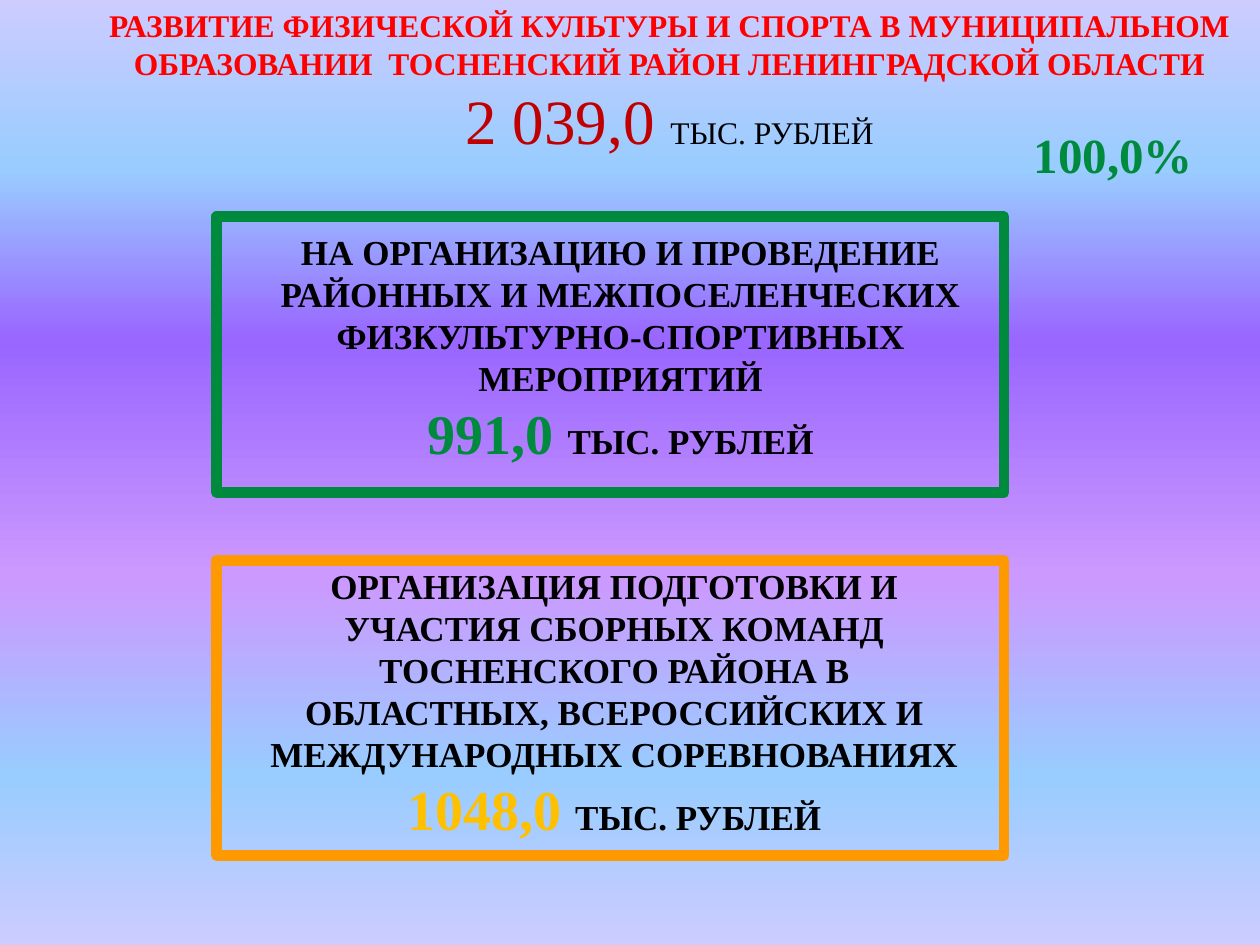
import pptx
import pptx.dml.color
import pptx.enum.dml
import pptx.enum.shapes
import pptx.enum.text
import pptx.oxml
import pptx.oxml.ns
import pptx.util
from pptx.util import Inches

FONT = "Times New Roman"
GREEN = "008A3E"
UNIT = "ТЫС. РУБЛЕЙ"
NAMESPACE = pptx.oxml.ns.nsdecls("a")
BACKDROP = [(0, "CCCCFF"), (18, "99CCFF"), (36, "9966FF"),
            (61, "CC99FF"), (82, "99CCFF"), (100, "CCCCFF")]

TITLE = {
    "place": (0.75, 0, 9.13, 1.31),
    "lines": [
        [("РАЗВИТИЕ ФИЗИЧЕСКОЙ КУЛЬТУРЫ И СПОРТА В МУНИЦИПАЛЬНОМ "
          "ОБРАЗОВАНИИ  ТОСНЕНСКИЙ РАЙОН ЛЕНИНГРАДСКОЙ ОБЛАСТИ",
          {"size": 18, "color": "FF0000", "outline": "000000"})],
        [("2 039,0 ", {"size": 36, "color": "C00000", "bold": False, "outline": "C00000"}),
         (UNIT, {"size": 18, "bold": False, "outline": "000000"})],
    ],
}
SHARE = {
    "place": (8.05, 0.94, 1.57, 0.57),
    "lines": [[("100,0%", {"size": 28, "color": GREEN, "outline": "4F6228", "shadow": True})]],
}
EXPENSES = [
    {"frame": (1.72, 1.72, 6.25, 2.19), "line": GREEN,
     "place": (2.09, 1.78, 5.67, 1.99), "amount": "991,0 ", "color": GREEN,
     "purpose": "НА ОРГАНИЗАЦИЮ И ПРОВЕДЕНИЕ РАЙОННЫХ И МЕЖПОСЕЛЕНЧЕСКИХ "
                "ФИЗКУЛЬТУРНО-СПОРТИВНЫХ МЕРОПРИЯТИЙ"},
    {"frame": (1.72, 4.45, 6.25, 2.34), "line": "FF9900",
     "place": (2.01, 4.43, 5.73, 2.32), "amount": "1048,0 ", "color": "FFC000",
     "purpose": "ОРГАНИЗАЦИЯ ПОДГОТОВКИ И УЧАСТИЯ СБОРНЫХ КОМАНД ТОСНЕНСКОГО РАЙОНА "
                "В ОБЛАСТНЫХ, ВСЕРОССИЙСКИХ И МЕЖДУНАРОДНЫХ СОРЕВНОВАНИЯХ"},
]


def rgb(value):
    return pptx.dml.color.RGBColor.from_string(value)


def element(markup):
    return pptx.oxml.parse_xml(markup.replace(">", f" {NAMESPACE}>", 1))


def add_span(para, text, size=20, color="000000", bold=True, outline=None, shadow=False):
    span = para.add_run()
    span.text = text
    span.font.size = pptx.util.Pt(size)
    span.font.name = FONT
    span.font.bold = bold
    span.font.color.rgb = rgb(color)
    properties = span.font._element
    if shadow:
        fill = properties.find(pptx.oxml.ns.qn("a:solidFill"))
        fill.addnext(element(
            '<a:effectLst><a:outerShdw blurRad="50800" dist="38100" dir="5400000" '
            'algn="t" rotWithShape="0"><a:srgbClr val="000000"><a:alpha val="40000"/>'
            '</a:srgbClr></a:outerShdw></a:effectLst>'))
    if outline:
        properties.insert(0, element(
            f'<a:ln w="9000"><a:solidFill><a:srgbClr val="{outline}"/></a:solidFill></a:ln>'))


def write_text(box, lines, place):
    box.left, box.top, box.width, box.height = map(Inches, place)
    frame = box.text_frame
    frame.word_wrap = True
    frame.auto_size = pptx.enum.text.MSO_AUTO_SIZE.SHAPE_TO_FIT_TEXT
    frame.vertical_anchor = pptx.enum.text.MSO_ANCHOR.TOP
    for index, spans in enumerate(lines):
        para = frame.add_paragraph() if index else frame.paragraphs[0]
        para.alignment = pptx.enum.text.PP_ALIGN.CENTER
        for text, style in spans:
            add_span(para, text, **style)


def paint_background(page):
    fill = page.background.fill
    fill.gradient()
    fill.gradient_angle = 270
    stops = page.element.find(".//" + pptx.oxml.ns.qn("a:gsLst"))
    for stop in list(stops):
        stops.remove(stop)
    for position, color in BACKDROP:
        stops.append(element(
            f'<a:gs pos="{position * 1000}"><a:srgbClr val="{color}"/></a:gs>'))


def add_frame(page, place, color):
    box = page.shapes.add_shape(pptx.enum.shapes.MSO_SHAPE.RECTANGLE, *map(Inches, place))
    box.shadow.inherit = False
    box.fill.background()
    box.line.color.rgb = rgb(color)
    box.line.width = pptx.util.Pt(6)


def add_text(page, lines, place):
    write_text(page.shapes.add_textbox(*map(Inches, place)), lines, place)


def main():
    deck = pptx.Presentation()
    deck.slide_width, deck.slide_height = Inches(10), Inches(7.5)
    page = deck.slides.add_slide(deck.slide_layouts[5])
    paint_background(page)
    write_text(page.shapes.title, **TITLE)
    for expense in EXPENSES:
        add_frame(page, expense["frame"], expense["line"])
        amount = (expense["amount"],
                  {"size": 32, "color": expense["color"], "outline": "262626"})
        add_text(page, [[(expense["purpose"], {})], [amount, (UNIT, {})]], expense["place"])
    add_text(page, **SHARE)
    deck.save("out.pptx")


if __name__ == "__main__":
    main()
